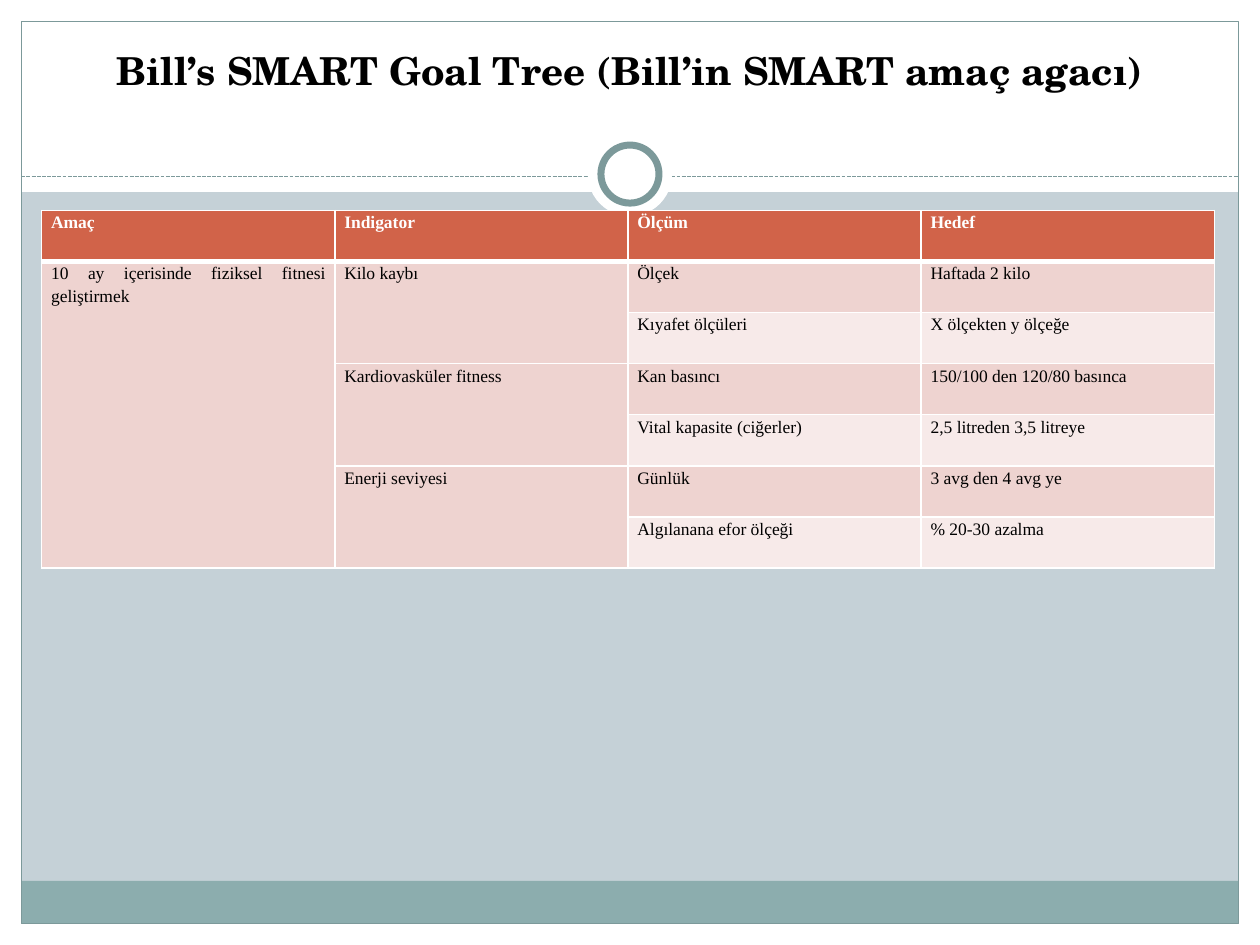
from lxml import etree
from pptx import Presentation
from pptx import util as u
from pptx.dml.color import RGBColor
from pptx.enum import dml, shapes, text
from pptx.oxml import ns

TITLE = "Bill’s SMART Goal Tree (Bill’in SMART amaç agacı)"
HEADERS = ["Amaç", "Indigator", "Ölçüm", "Hedef"]
GOAL = "10 ay içerisinde fiziksel fitnesi geliştirmek"
INDICATORS = [
    ("Kilo kaybı", [("Ölçek", "Haftada 2 kilo"),
                    ("Kıyafet ölçüleri", "X ölçekten y ölçeğe")]),
    ("Kardiovasküler fitness", [("Kan basıncı", "150/100 den 120/80 basınca"),
                                ("Vital kapasite (ciğerler)", "2,5 litreden 3,5 litreye")]),
    ("Enerji seviyesi", [("Günlük", "3 avg den 4 avg ye"),
                         ("Algılanana efor ölçeği", "% 20-30 azalma")]),
]

WHITE, BLACK, SKY = "FFFFFF", "000000", "C5D1D7"
TEAL, FRAME = "8CADAE", "7C999A"
HEADER_FILL, DARK_BAND, LIGHT_BAND = "D16349", "EED3D0", "F7EAE9"

WIDTH, HEIGHT, MARGIN = 25.4, 19.05, 0.43
HEADER_HEIGHT, FOOTER_HEIGHT = 3.87, 0.86
RULE_Y, RING_Y = 3.56, 3.51
TABLE_LEFT, TABLE_TOP = 0.84, 4.24
COLUMN_WIDTH, ROW_HEIGHT = 5.91, 1.03

RECTANGLE = shapes.MSO_SHAPE.RECTANGLE
OVAL = shapes.MSO_SHAPE.OVAL


def color(value):
    return RGBColor.from_string(value)


def lengths(*values):
    return [u.Cm(value) for value in values]


def write(frame, words, font, size, ink, bold=False, align=None, spacing=None):
    frame.word_wrap = True
    paragraph = frame.paragraphs[0]
    paragraph.alignment = align
    paragraph.line_spacing = spacing
    run = paragraph.add_run()
    run.text = words
    run.font.name, run.font.size, run.font.bold = font, u.Pt(size), bold
    run.font.color.rgb = color(ink)


def add_shape(slide, kind, box, fill=None, line=None, weight=0.75):
    shape = slide.shapes.add_shape(kind, *lengths(*box))
    shape.shadow.inherit = False
    if fill:
        shape.fill.solid()
        shape.fill.fore_color.rgb = color(fill)
    else:
        shape.fill.background()
    if line:
        shape.line.color.rgb = color(line)
        shape.line.width = u.Pt(weight)
    else:
        shape.line.fill.background()


def add_circle(slide, diameter, **style):
    """Centre a circle on the dashed rule."""
    box = (WIDTH / 2 - diameter / 2, RING_Y - diameter / 2, diameter, diameter)
    add_shape(slide, OVAL, box, WHITE, **style)


def add_backdrop(slide):
    slide.background.fill.solid()
    slide.background.fill.fore_color.rgb = color(SKY)
    inner_width, inner_height = WIDTH - 2 * MARGIN, HEIGHT - 2 * MARGIN
    bottom = HEIGHT - MARGIN
    for box in [(0, bottom, WIDTH, MARGIN), (0, 0, WIDTH, HEADER_HEIGHT),
                (0, 0, MARGIN, HEIGHT), (WIDTH - MARGIN, 0, MARGIN, HEIGHT)]:
        add_shape(slide, RECTANGLE, box, WHITE)
    add_shape(slide, RECTANGLE,
              (MARGIN, bottom - FOOTER_HEIGHT, inner_width, FOOTER_HEIGHT), TEAL)
    add_shape(slide, RECTANGLE, (MARGIN, MARGIN, inner_width, inner_height), line=FRAME)

    rule = slide.shapes.add_connector(
        shapes.MSO_CONNECTOR.STRAIGHT, *lengths(MARGIN, RULE_Y, WIDTH - MARGIN, RULE_Y))
    rule.line.color.rgb = color(FRAME)
    rule.line.width = u.Pt(0.75)
    rule.line.dash_style = dml.MSO_LINE.SQUARE_DOT
    etree.SubElement(rule._element.spPr, ns.qn("a:effectLst"))

    add_circle(slide, 1.7)
    add_circle(slide, 1.17, line=FRAME, weight=4)


def add_title(slide):
    frame = slide.shapes.add_textbox(*lengths(0.84, 0.64, 23.7, 2.69)).text_frame
    frame.margin_top = u.Cm(0.3)
    write(frame, TITLE, "TeX Gyre Schola", 22, BLACK, bold=True,
          align=text.PP_ALIGN.CENTER)


def style_cell(cell, fill, top=1, bottom=1):
    properties = cell._tc.get_or_add_tcPr()
    for side, weight in zip("LRTB", (1, 1, top, bottom)):
        line = etree.SubElement(properties, ns.qn(f"a:ln{side}"), w=str(u.Pt(weight)))
        paint = etree.SubElement(line, ns.qn("a:solidFill"))
        etree.SubElement(paint, ns.qn("a:srgbClr"), val=WHITE)
    cell.fill.solid()
    cell.fill.fore_color.rgb = color(fill)
    cell.margin_left = cell.margin_right = u.Cm(0.19)
    cell.margin_top = cell.margin_bottom = 0


def add_goal_table(slide):
    rows = [HEADERS]
    for indicator, measures in INDICATORS:
        for index, measure in enumerate(measures):
            rows.append(["", "" if index else indicator, *measure])
    rows[1][0] = GOAL

    table = slide.shapes.add_table(
        len(rows), len(HEADERS), *lengths(TABLE_LEFT, TABLE_TOP, COLUMN_WIDTH * len(HEADERS),
                                          ROW_HEIGHT * len(rows))).table
    for column in table.columns:
        column.width = u.Cm(COLUMN_WIDTH)
    for row in table.rows:
        row.height = u.Cm(ROW_HEIGHT)

    for r, row in enumerate(rows):
        for c, words in enumerate(row):
            cell = table.cell(r, c)
            is_header = r == 0
            band = DARK_BAND if r % 2 or c < 2 else LIGHT_BAND
            style_cell(cell, HEADER_FILL if is_header else band,
                       top=3 if r == 1 else 1, bottom=3 if is_header else 1)
            if words:
                write(cell.text_frame, words, "Times New Roman", 10,
                      WHITE if is_header else BLACK, bold=is_header,
                      align=text.PP_ALIGN.JUSTIFY, spacing=1.15)

    table.cell(1, 0).merge(table.cell(len(rows) - 1, 0))
    start = 1
    for _, measures in INDICATORS:
        end = start + len(measures)
        table.cell(start, 1).merge(table.cell(end - 1, 1))
        start = end


def main():
    presentation = Presentation()
    presentation.slide_width, presentation.slide_height = lengths(WIDTH, HEIGHT)
    slide = presentation.slides.add_slide(presentation.slide_layouts[6])
    add_backdrop(slide)
    add_title(slide)
    add_goal_table(slide)
    presentation.save("out.pptx")


if __name__ == "__main__":
    main()
